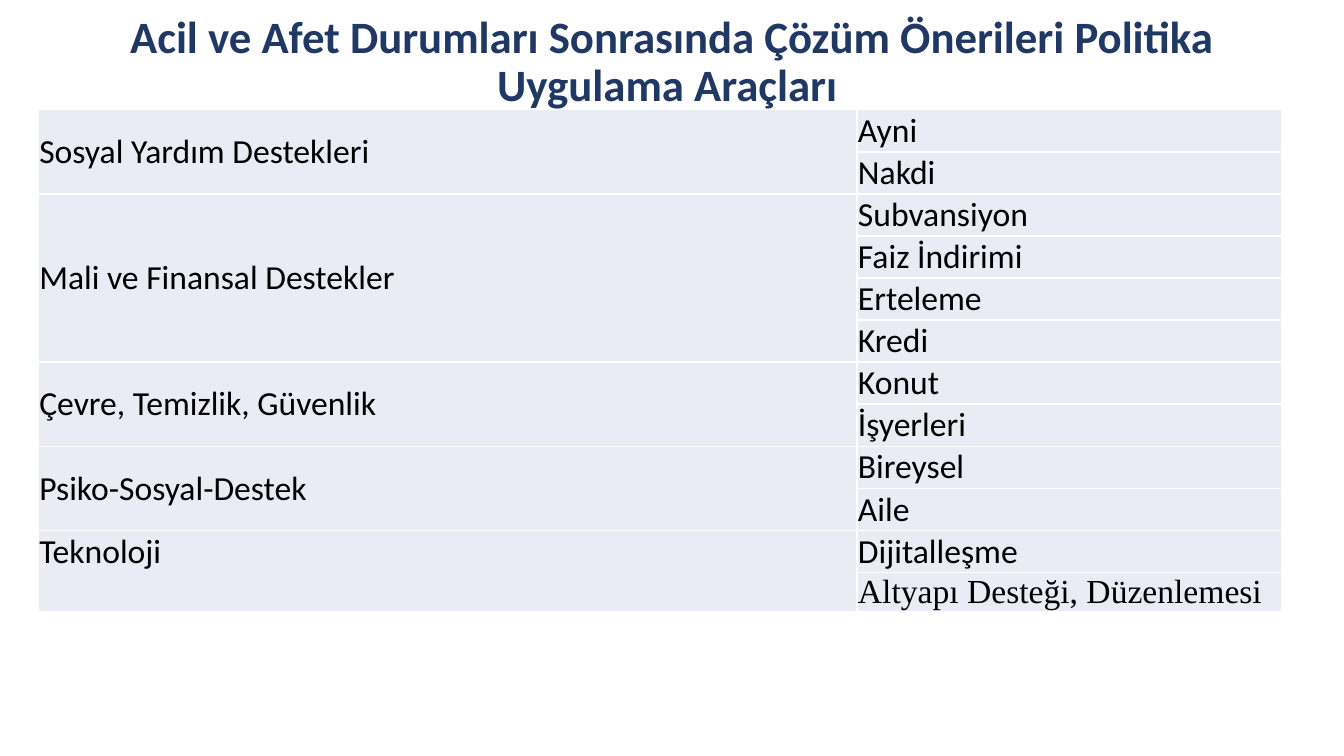
from dataclasses import dataclass

import lxml.etree
import pptx
import pptx.dml.color
import pptx.enum.text
import pptx.oxml.ns
import pptx.util

PX = 9144  # EMU; 100 px to the inch


@dataclass(frozen=True)
class Theme:
    title_color: str = "203864"
    text_color: str = "000000"
    cell_fill: str = "E9EBF5"
    border: str = "FFFFFF"
    font: str = "Calibri"
    serif: str = "Times New Roman"
    title_size: int = 32
    text_size: int = 24
    border_width: int = 1


THEME = Theme()
MIDDLE = pptx.enum.text.MSO_ANCHOR.MIDDLE
TOP = pptx.enum.text.MSO_ANCHOR.TOP

TITLE = "Acil ve Afet Durumları Sonrasında Çözüm Önerileri Politika Uygulama Araçları "
# Policy area, its vertical anchor, and its tools as (text, font)
POLICIES = [
    ("Sosyal Yardım Destekleri", MIDDLE,
     [("Ayni", THEME.font), ("Nakdi", THEME.font)]),
    ("Mali ve Finansal Destekler", MIDDLE,
     [("Subvansiyon", THEME.font), ("Faiz İndirimi", THEME.font),
      ("Erteleme", THEME.font), ("Kredi", THEME.font)]),
    ("Çevre, Temizlik, Güvenlik", MIDDLE,
     [("Konut", THEME.font), ("İşyerleri", THEME.font)]),
    ("Psiko-Sosyal-Destek", MIDDLE,
     [("Bireysel", THEME.font), ("Aile", THEME.font)]),
    ("Teknoloji", TOP,
     [("Dijitalleşme", THEME.font), ("Altyapı Desteği, Düzenlemesi", THEME.serif)]),
]


def px(n):
    return pptx.util.Emu(n * PX)


def rgb(color):
    return pptx.dml.color.RGBColor.from_string(color)


def style_font(font, name, size, color, bold=False):
    font.name, font.size, font.bold = name, pptx.util.Pt(size), bold
    font.color.rgb = rgb(color)


def add_title(s, left, top, width, height):
    sp = s.shapes.title
    sp.left, sp.top, sp.width, sp.height = map(px, (left, top, width, height))
    tf = sp.text_frame
    tf.text = TITLE
    tf.word_wrap = True
    tf.auto_size = pptx.enum.text.MSO_AUTO_SIZE.NONE
    tf.vertical_anchor = MIDDLE
    p = tf.paragraphs[0]
    p.alignment = pptx.enum.text.PP_ALIGN.CENTER
    p.line_spacing = 0.9
    style_font(p.runs[0].font, THEME.font, THEME.title_size, THEME.title_color, True)


def style_cell(cell):
    """Give the cell its borders, fill and margins."""
    tc_pr = cell._tc.get_or_add_tcPr()
    qn = pptx.oxml.ns.qn
    for side in ("a:lnL", "a:lnR", "a:lnT", "a:lnB"):
        ln = lxml.etree.SubElement(tc_pr, qn(side), w=str(pptx.util.Pt(THEME.border_width)))
        fill = lxml.etree.SubElement(ln, qn("a:solidFill"))
        lxml.etree.SubElement(fill, qn("a:srgbClr"), val=THEME.border)
    cell.fill.solid()
    cell.fill.fore_color.rgb = rgb(THEME.cell_fill)
    cell.margin_left = cell.margin_right = cell.margin_top = px(1)
    cell.margin_bottom = 0


def write_cell(cell, text, font, anchor=TOP):
    cell.text_frame.text = text
    cell.vertical_anchor = anchor
    style_font(cell.text_frame.paragraphs[0].runs[0].font,
               font, THEME.text_size, THEME.text_color)


def add_policy_table(s, left, top, width, row_height, area_width):
    count = sum(len(tools) for _, _, tools in POLICIES)
    table = s.shapes.add_table(count, 2, px(left), px(top), px(width),
                               px(row_height * count)).table
    table.first_row = table.horz_banding = False
    table.columns[0].width = px(area_width)
    table.columns[1].width = px(width - area_width)
    for cell in table.iter_cells():
        style_cell(cell)
    row = 0
    for area, anchor, tools in POLICIES:
        table.cell(row, 0).merge(table.cell(row + len(tools) - 1, 0))
        write_cell(table.cell(row, 0), area, THEME.font, anchor)
        for tool, font in tools:
            write_cell(table.cell(row, 1), tool, font)
            row += 1


def main():
    prs = pptx.Presentation()
    prs.slide_width, prs.slide_height = px(1333), px(750)
    s = prs.slides.add_slide(prs.slide_layouts.get_by_name("Title Only"))
    add_title(s, 30, 15, 1274, 95)
    add_policy_table(s, 38, 109, 1233, 39, 812)
    prs.save("out.pptx")


if __name__ == "__main__":
    main()
